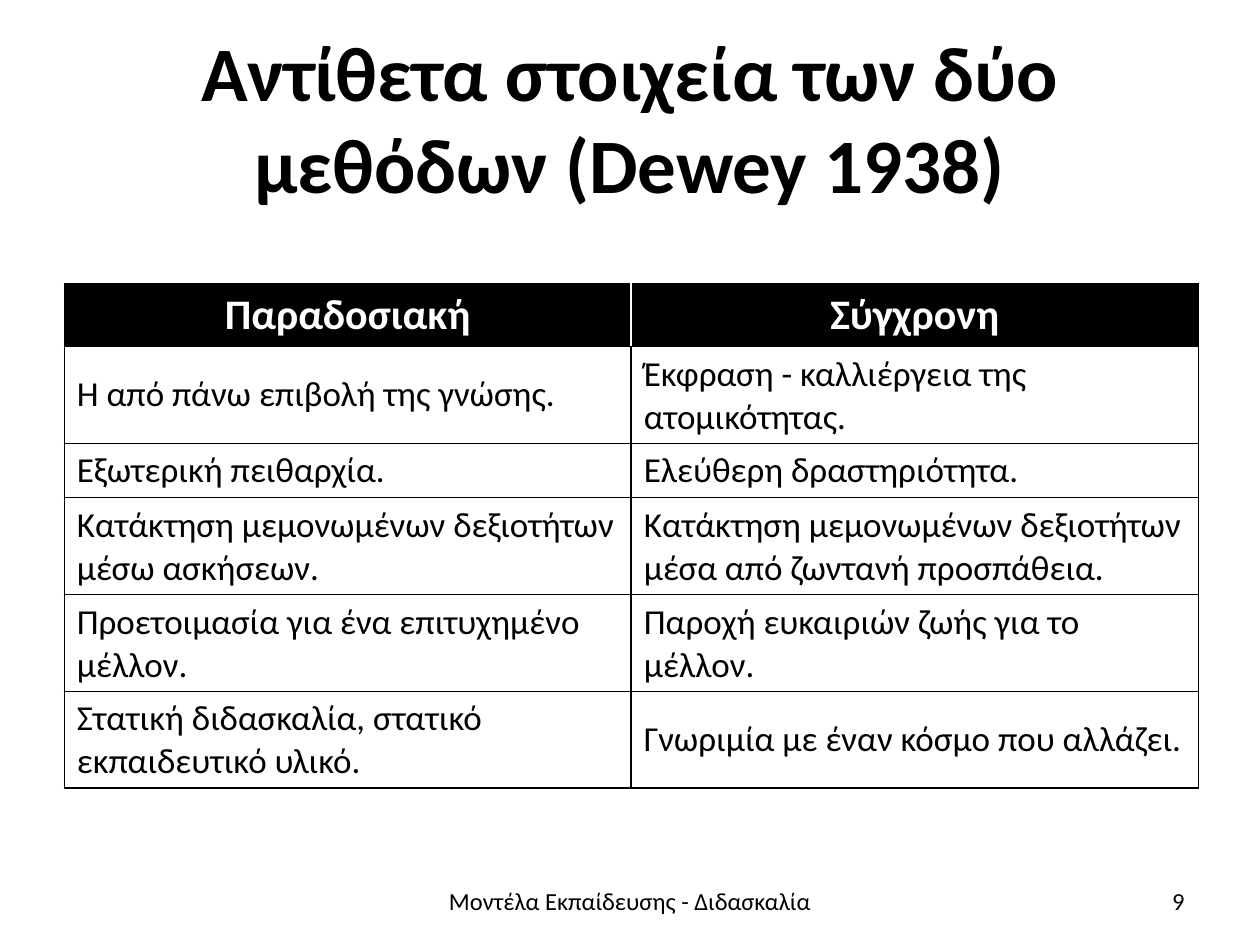
from lxml import etree
from pptx import Presentation
from pptx.dml.color import RGBColor
from pptx.enum.text import MSO_ANCHOR, PP_ALIGN
from pptx.oxml.ns import qn
from pptx.util import Inches, Pt

BLACK = RGBColor(0, 0, 0)
WHITE = RGBColor(255, 255, 255)
LEFT, CENTER, RIGHT = PP_ALIGN.LEFT, PP_ALIGN.CENTER, PP_ALIGN.RIGHT
MIDDLE = MSO_ANCHOR.MIDDLE
FONT = "Calibri"
ROW_HEIGHT = 0.41

ROWS = [
    ("Παραδοσιακή", "Σύγχρονη"),
    ("Η από πάνω επιβολή της γνώσης.", "Έκφραση - καλλιέργεια της ατομικότητας."),
    ("Εξωτερική πειθαρχία.", "Ελεύθερη δραστηριότητα."),
    ("Κατάκτηση μεμονωμένων δεξιοτήτων μέσω ασκήσεων.",
     "Κατάκτηση μεμονωμένων δεξιοτήτων μέσα από ζωντανή προσπάθεια."),
    ("Προετοιμασία για ένα επιτυχημένο μέλλον.", "Παροχή ευκαιριών ζωής για το μέλλον."),
    ("Στατική διδασκαλία, στατικό εκπαιδευτικό υλικό.",
     "Γνωριμία με έναν κόσμο που αλλάζει."),
]


def write(tf, text, size, color, align, bold=False):
    """Put one formatted paragraph in a text frame."""
    tf.word_wrap = True
    p = tf.paragraphs[0]
    p.text = text
    p.alignment = align
    font = p.runs[0].font
    font.name, font.size, font.bold = FONT, Pt(size), bold
    font.color.rgb = color


def add_text(slide, box, text, size, align, bold=False):
    """Add a vertically centred text box."""
    tf = slide.shapes.add_textbox(*map(Inches, box)).text_frame
    tf.vertical_anchor = MIDDLE
    write(tf, text, size, BLACK, align, bold)


def set_border(cell, side, color, width):
    """Add one cell border ahead of the cell fill."""
    tc_pr = cell._tc.get_or_add_tcPr()
    ln = etree.SubElement(tc_pr, qn(f"a:ln{side}"), w=str(Pt(width)))
    fill = etree.SubElement(ln, qn("a:solidFill"))
    etree.SubElement(fill, qn("a:srgbClr"), val=str(color))


def add_comparison(slide, box, rows):
    """Add the two-column comparison table with its black header."""
    columns = len(rows[0])
    table = slide.shapes.add_table(len(rows), columns, *map(Inches, box)).table
    for i, row in enumerate(rows):
        header = i == 0
        table.rows[i].height = Inches(ROW_HEIGHT)
        for j, text in enumerate(row):
            cell = table.cell(i, j)
            cell.vertical_anchor = MIDDLE
            for side in "LRTB":
                inner = side == "L" and j > 0 or side == "R" and j < columns - 1
                color = WHITE if header and inner else BLACK
                set_border(cell, side, color, 1 if inner else 0.75)
            cell.fill.solid()
            cell.fill.fore_color.rgb = BLACK if header else WHITE
            if header:
                write(cell.text_frame, text, 24, WHITE, CENTER, True)
            else:
                write(cell.text_frame, text, 20, BLACK, LEFT)


def add_footer(slide, left, top, width, height):
    """Add the centred footer text and the page number at the right."""
    number_width = 2.33
    text_width = 3.17
    center = left + (width - text_width) / 2
    add_text(slide, (center, top, text_width, height),
             "Μοντέλα Εκπαίδευσης - Διδασκαλία", 14, CENTER)
    add_text(slide, (left + width - number_width, top, number_width, height),
             "9", 14, RIGHT)


def main():
    """Build the slide and save it."""
    prs = Presentation()
    prs.slide_width, prs.slide_height = Inches(10), Inches(7.5)
    s = prs.slides.add_slide(prs.slide_layouts[6])
    add_text(s, (0.5, 0.3, 9, 1.25),
             "Αντίθετα στοιχεία των δύο μεθόδων (Dewey 1938)", 44, CENTER, True)
    add_comparison(s, (0.51, 2.25, 9, ROW_HEIGHT * len(ROWS)), ROWS)
    add_footer(s, 0.5, 6.95, 9, 0.4)
    prs.save("out.pptx")


if __name__ == "__main__":
    main()
